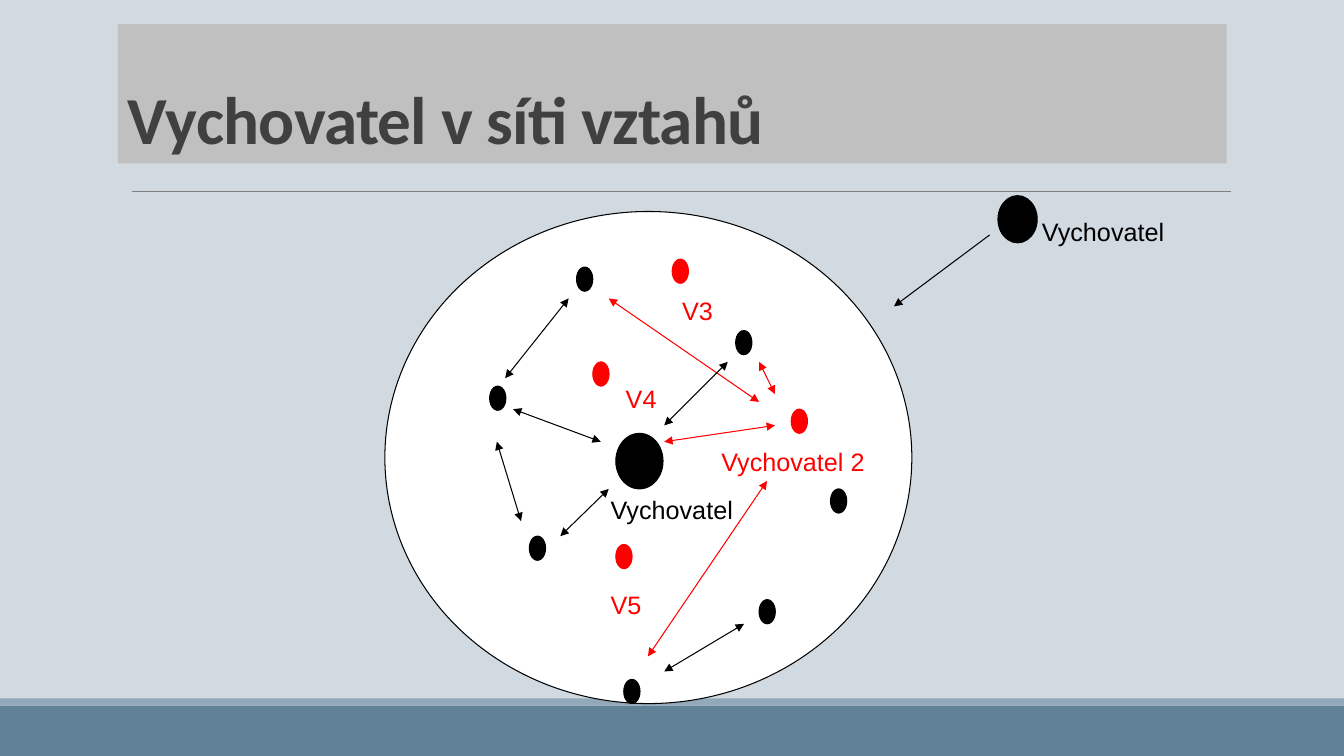
from dataclasses import dataclass
from typing import Any

from lxml import etree
from pptx import Presentation
from pptx.dml.color import RGBColor
from pptx.enum.shapes import MSO_CONNECTOR, MSO_SHAPE
from pptx.enum.text import MSO_ANCHOR, MSO_AUTO_SIZE, PP_ALIGN
from pptx.oxml.ns import qn
from pptx.util import Cm, Pt

RECT = MSO_SHAPE.RECTANGLE
OVAL = MSO_SHAPE.OVAL
STRAIGHT = MSO_CONNECTOR.STRAIGHT
BOTTOM = MSO_ANCHOR.BOTTOM
NO_FIT = MSO_AUTO_SIZE.NONE
GROW = MSO_AUTO_SIZE.SHAPE_TO_FIT_TEXT
LEFT = PP_ALIGN.LEFT


@dataclass(frozen=True)
class Theme:
    background: str = "D1D9E1"
    footer: str = "618197"
    footer_edge: str = "92A9B9"
    rule: str = "808080"
    title_fill: str = "C0C0C0"
    title_text: str = "404040"
    black: str = "000000"
    red: str = "FF0000"
    white: str = "FFFFFF"
    title_font: str = "Calibri"
    label_font: str = "Arial"
    title_size: int = 48
    label_size: int = 18
    line: float = 0.75
    rule_line: float = 0.5


@dataclass(frozen=True)
class Area:
    x: float
    y: float
    w: float
    h: float
    fill: str
    outline: str | None = None


@dataclass(frozen=True)
class Label:
    text: str
    x: float
    y: float
    w: float
    color: str


@dataclass(frozen=True)
class Arrow:
    x1: float
    y1: float
    x2: float
    y2: float
    color: str
    ends: tuple[str, ...] = ("headEnd", "tailEnd")


T = Theme()
WIDTH, HEIGHT = 33.87, 19.05
DOT_W, DOT_H = 0.41, 0.61
LABEL_H = 1.02

BANDS = [
    Area(0, 17.78, WIDTH, 1.27, T.footer),
    Area(0, 17.6, WIDTH, 0.18, T.footer_edge),
]
GROUP = Area(9.7, 5.33, 13.28, 12.4, T.white, T.black)
EDUCATORS = [
    Area(15.52, 10.92, 1.19, 1.4, T.black, T.black),
    Area(25.15, 4.93, 0.99, 1.19, T.black, T.black),
]
DOTS = {
    T.black: [(12.34, 9.73), (14.53, 6.73), (18.54, 8.33), (15.72, 17.12),
              (19.13, 15.11), (13.34, 13.51), (20.93, 12.32)],
    T.red: [(19.94, 10.31), (16.94, 6.53), (14.94, 9.12), (15.52, 13.72)],
}
LABELS = [
    Label("Vychovatel", 15.14, 12.32, 3.61, T.black),
    Label("Vychovatel 2", 17.93, 11.13, 4.14, T.red),
    Label("Vychovatel", 26.01, 5.33, 3.61, T.black),
    Label("V3", 16.94, 7.32, 1.3, T.red),
    Label("V4", 15.52, 9.53, 1.3, T.red),
    Label("V5", 15.14, 14.73, 1.3, T.red),
]
ARROWS = [
    Arrow(14.33, 7.52, 12.73, 9.53, T.black),
    Arrow(12.52, 11.13, 13.13, 13.13, T.black),
    Arrow(16.74, 16.92, 18.75, 15.72, T.black),
    Arrow(24.94, 5.92, 22.53, 7.72, T.black, ("tailEnd",)),
    Arrow(16.74, 11.13, 19.53, 10.72, T.red),
    Arrow(19.53, 9.93, 19.13, 9.12, T.red),
    Arrow(15.34, 7.52, 19.13, 10.13, T.red),
    Arrow(19.33, 12.12, 16.33, 16.54, T.red),
    Arrow(15.14, 11.13, 12.93, 10.31, T.black),
    Arrow(15.34, 12.32, 14.12, 13.51, T.black),
    Arrow(16.74, 10.72, 18.34, 9.12, T.black),
]


def apply(target: Any, values: dict[str, Any]) -> None:
    for name, value in values.items():
        setattr(target, name, value)


def paint(fill: Any, color: str) -> None:
    fill.solid()
    fill.fore_color.rgb = RGBColor.from_string(color)


def write(p: Any, text: str, font: dict[str, Any], color: str) -> Any:
    r = p.add_run()
    r.text = text
    apply(r.font, font)
    r.font.color.rgb = RGBColor.from_string(color)
    return r


def add_area(s: Any, preset: Any, area: Area) -> None:
    sp = s.shapes.add_shape(preset, Cm(area.x), Cm(area.y), Cm(area.w), Cm(area.h))
    sp.shadow.inherit = False
    paint(sp.fill, area.fill)
    if area.outline:
        paint(sp.line.fill, area.outline)
        sp.line.width = Pt(T.line)
    else:
        sp.line.fill.background()


def add_line(s: Any, arrow: Arrow, width: float) -> None:
    sp = s.shapes.add_connector(
        STRAIGHT, Cm(arrow.x1), Cm(arrow.y1), Cm(arrow.x2), Cm(arrow.y2))
    paint(sp.line.fill, arrow.color)
    sp.line.width = Pt(width)
    props = sp.element.spPr
    for end in arrow.ends:
        etree.SubElement(props.find(qn("a:ln")), qn(f"a:{end}"), type="triangle")
    etree.SubElement(props, qn("a:effectLst"))


def add_label(s: Any, label: Label) -> None:
    sp = s.shapes.add_textbox(Cm(label.x), Cm(label.y), Cm(label.w), Cm(LABEL_H))
    tf = sp.text_frame
    apply(tf, {"word_wrap": False, "auto_size": GROW})
    font = {"name": T.label_font, "size": Pt(T.label_size)}
    write(tf.paragraphs[0], label.text, font, label.color)


def add_title(s: Any, text: str) -> None:
    sp = s.shapes.title
    apply(sp, {"left": Cm(2.97), "top": Cm(0.61), "width": Cm(27.94), "height": Cm(3.51)})
    paint(sp.fill, T.title_fill)
    tf = sp.text_frame
    apply(tf, {"vertical_anchor": BOTTOM, "word_wrap": True, "auto_size": NO_FIT})
    p = tf.paragraphs[0]
    apply(p, {"alignment": LEFT, "line_spacing": 0.85})
    font = {"name": T.title_font, "size": Pt(T.title_size), "bold": True}
    r = write(p, text, font, T.title_text)
    r.font._element.set("spc", "-50")


def main() -> None:
    prs = Presentation()
    apply(prs, {"slide_width": Cm(WIDTH), "slide_height": Cm(HEIGHT)})
    s = prs.slides.add_slide(prs.slide_layouts[5])
    paint(s.background.fill, T.background)
    add_title(s, "Vychovatel v síti vztahů")
    for band in BANDS:
        add_area(s, RECT, band)
    add_line(s, Arrow(3.33, 4.83, 31.01, 4.83, T.rule, ()), T.rule_line)
    dots = [Area(x, y, DOT_W, DOT_H, color, color)
            for color, places in DOTS.items() for x, y in places]
    for area in [GROUP, *EDUCATORS, *dots]:
        add_area(s, OVAL, area)
    for label in LABELS:
        add_label(s, label)
    for arrow in ARROWS:
        add_line(s, arrow, T.line)
    prs.save("out.pptx")


if __name__ == "__main__":
    main()
